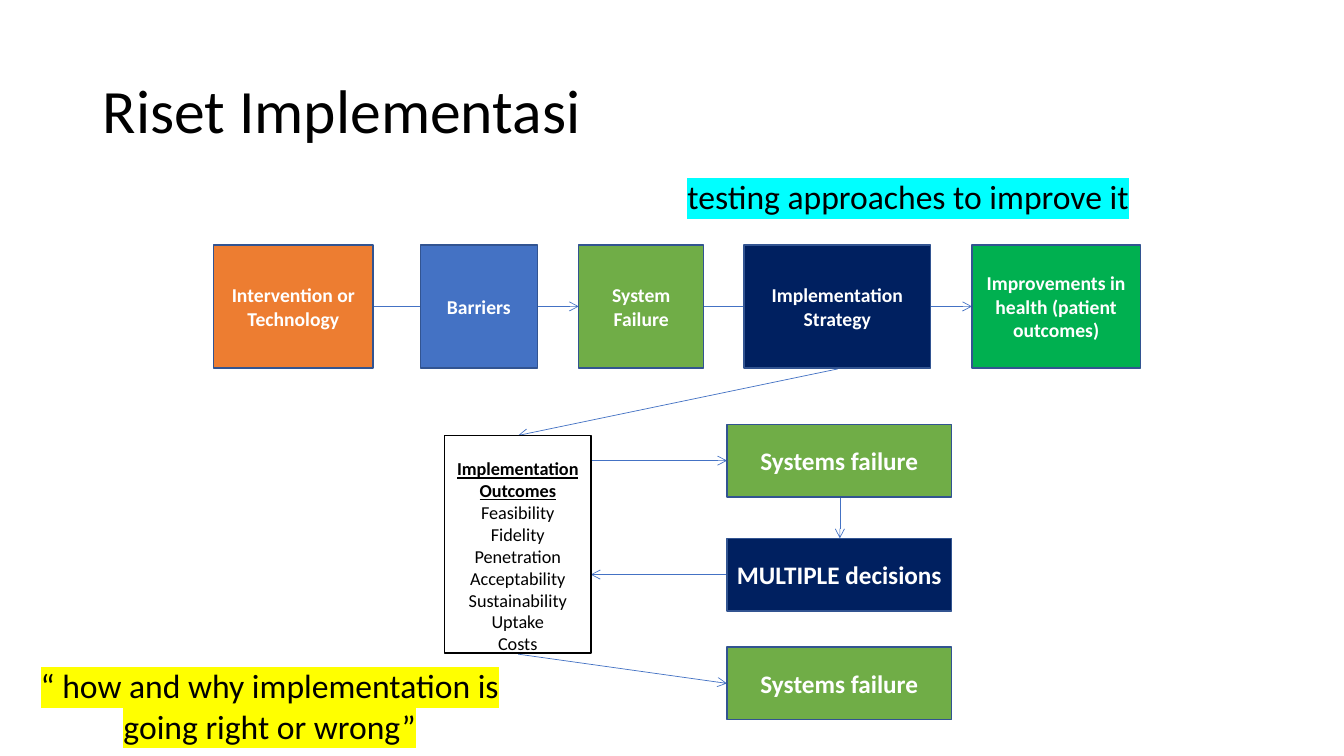
from lxml.etree import SubElement
from pptx import Presentation
from pptx.dml.color import RGBColor
from pptx.enum.shapes import MSO_CONNECTOR as Connector, MSO_SHAPE as Shape
from pptx.enum.text import MSO_ANCHOR as Anchor, MSO_AUTO_SIZE as AutoSize, PP_ALIGN as Align
from pptx.oxml.ns import qn
from pptx.util import Inches, Pt

COLORS = {
    "orange": "ED7D31", "blue": "4472C4", "lime": "70AD47", "navy": "002060",
    "green": "00B050", "border": "325491", "white": "FFFFFF", "black": "000000",
    "yellow": "FFFF00", "cyan": "00FFFF",
}


class SlideBuilder:
    """Holds the style and the current page, and draws its elements."""

    def __init__(self, page, family="Calibri"):
        self.page = page
        self.family = family

    def color(self, name):
        return RGBColor.from_string(COLORS[name])

    def format(self, para, size, color="black", align=Align.CENTER, bold=False, underline=False):
        para.alignment = align
        font = para.font
        font.name, font.size = self.family, Pt(size)
        font.bold, font.underline = bold, underline
        font.color.rgb = self.color(color)

    def title(self, text, left, top, width, height):
        box = self.page.shapes.title
        box.left, box.top, box.width, box.height = map(Inches, (left, top, width, height))
        frame = box.text_frame
        frame.text = text
        frame.auto_size = AutoSize.NONE
        frame.vertical_anchor = Anchor.MIDDLE
        para = frame.paragraphs[0]
        para.line_spacing = 0.9
        self.format(para, 44, align=Align.LEFT)

    def rectangle(self, left, top, width, height, fill, border="border", weight=1):
        box = self.page.shapes.add_shape(
            Shape.RECTANGLE, *map(Inches, (left, top, width, height)))
        box.shadow.inherit = False
        box.fill.solid()
        box.fill.fore_color.rgb = self.color(fill)
        box.line.color.rgb = self.color(border)
        box.line.width = Pt(weight)
        box.text_frame.word_wrap = True
        return box

    def label(self, text, left, top, width, height, fill, size):
        frame = self.rectangle(left, top, width, height, fill).text_frame
        frame.vertical_anchor = Anchor.MIDDLE
        frame.text = text
        self.format(frame.paragraphs[0], size, "white", bold=True)

    def outcomes(self, heading, items, left, top, width, height):
        frame = self.rectangle(left, top, width, height, "white", "black", 1.25).text_frame
        frame.vertical_anchor = Anchor.TOP
        frame.margin_left = frame.margin_right = frame.margin_bottom = 0
        frame.margin_top = Inches(0.22)
        frame.text = "\n".join([heading, *items])
        for index, para in enumerate(frame.paragraphs):
            self.format(para, 13, bold=index == 0, underline=index == 0)

    def arrow(self, start, end):
        line = self.page.shapes.add_connector(
            Connector.STRAIGHT, *map(Inches, (*start, *end)))
        line.line.color.rgb = self.color("blue")
        line.line.width = Pt(0.5)
        SubElement(line.line._get_or_add_ln(), qn("a:tailEnd"), type="arrow")
        SubElement(line._element.spPr, qn("a:effectLst"))

    def note(self, text, left, top, width, height, highlight, align):
        box = self.page.shapes.add_textbox(*map(Inches, (left, top, width, height)))
        frame = box.text_frame
        frame.word_wrap = True
        para = frame.paragraphs[0]
        span = para.add_run()
        span.text = text
        self.format(para, 24, align=align)
        marker = SubElement(span._r.get_or_add_rPr(), qn("a:highlight"))
        SubElement(marker, qn("a:srgbClr"), val=COLORS[highlight])


def main():
    deck = Presentation()
    deck.slide_width, deck.slide_height = Inches(13.33), Inches(7.5)
    builder = SlideBuilder(deck.slides.add_slide(deck.slide_layouts[5]))
    builder.title("Riset Implementasi", 0.92, 0.4, 11.5, 1.45)

    arrows = [
        ((3.71, 3.04), (5.74, 3.04)), ((6.97, 3.04), (9.64, 3.04)),
        ((8.33, 4.94), (8.33, 5.34)), ((8.31, 3.66), (5.14, 4.32)),
        ((5.86, 4.57), (7.21, 4.57)), ((7.21, 5.7), (5.86, 5.7)),
        ((5.14, 6.49), (7.21, 6.78)),
    ]
    for start, end in arrows:
        builder.arrow(start, end)

    chain = [
        ("Intervention or Technology", 2.12, 1.58, "orange"),
        ("Barriers", 4.17, 1.16, "blue"),
        ("System Failure", 5.74, 1.24, "lime"),
        ("Implementation Strategy", 7.38, 1.85, "navy"),
        ("Improvements in health (patient outcomes)", 9.64, 1.67, "green"),
    ]
    for text, left, width, fill in chain:
        builder.label(text, left, 2.43, width, 1.22, fill, 14)

    stack = [
        ("Systems failure", 4.21, "lime"),
        ("MULTIPLE decisions", 5.34, "navy"),
        ("Systems failure", 6.42, "lime"),
    ]
    for text, top, fill in stack:
        builder.label(text, 7.21, top, 2.23, 0.72, fill, 18)

    builder.outcomes(
        "Implementation Outcomes",
        ["Feasibility", "Fidelity", "Penetration", "Acceptability",
         "Sustainability", "Uptake", "Costs"],
        4.41, 4.32, 1.45, 2.16)
    builder.note("“ how and why implementation is going right or wrong”",
                 0.02, 6.55, 5.31, 0.91, "yellow", Align.CENTER)
    builder.note("testing approaches to improve it",
                 6.72, 1.7, 6.6, 0.5, "cyan", Align.LEFT)
    deck.save("out.pptx")


if __name__ == "__main__":
    main()
